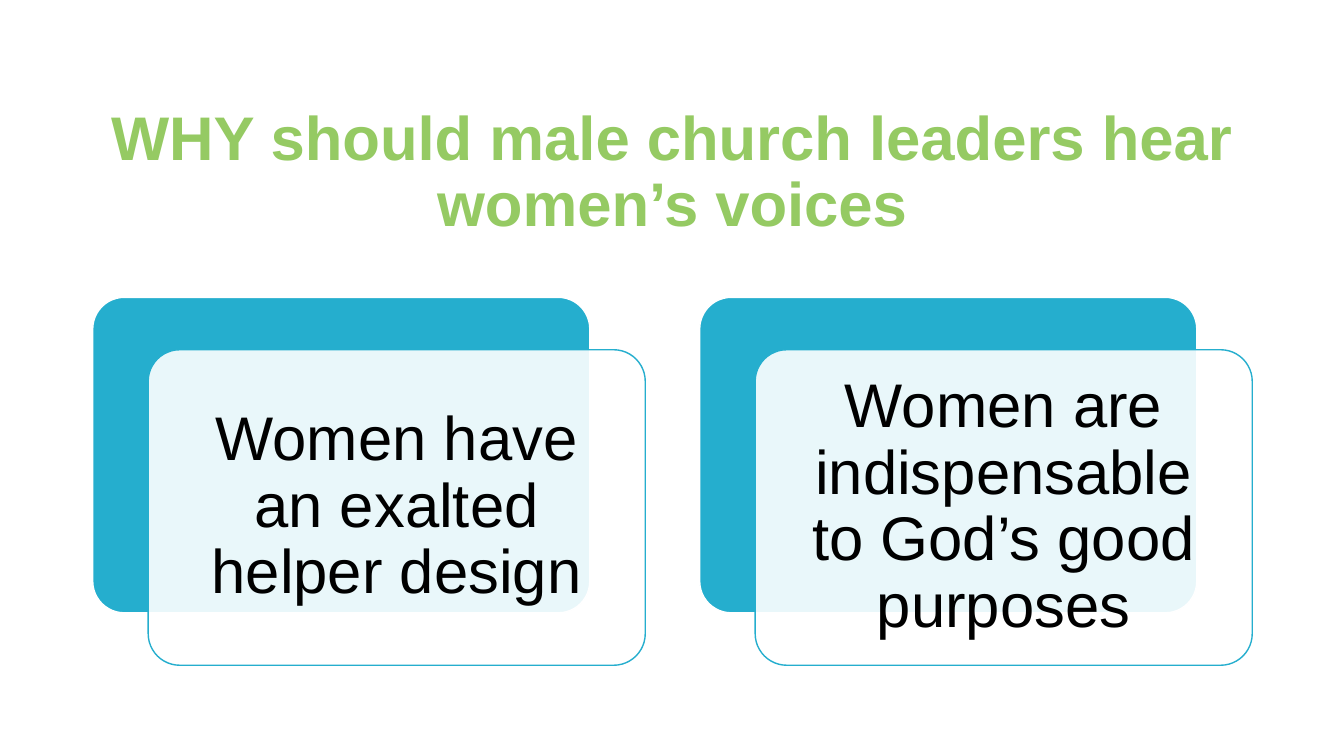
from lxml import etree
from pptx import Presentation
from pptx import util as u
from pptx.dml.color import RGBColor
from pptx.enum import shapes, text
from pptx.oxml.ns import qn


def color(value):
    return RGBColor.from_string(value)


class SlideBuilder:
    """Hold the slide and its style, and add each kind of element."""

    font = "Arial"
    size = 44
    accent = "25AECE"
    white = "FFFFFF"
    card_size = (4.93, 3.13)

    def __init__(self, deck):
        self.slide = deck.slides.add_slide(deck.slide_layouts[5])
        self.slide.background.fill.solid()
        self.slide.background.fill.fore_color.rgb = color(self.white)

    def set_words(self, shape, words, ink, bold=False, inset=0.1):
        frame = shape.text_frame
        frame.text = words
        frame.word_wrap = True
        frame.auto_size = text.MSO_AUTO_SIZE.NONE
        frame.vertical_anchor = text.MSO_ANCHOR.MIDDLE
        frame.margin_left = frame.margin_right = u.Inches(inset)
        frame.margin_top = frame.margin_bottom = u.Inches(inset)
        para = frame.paragraphs[0]
        para.alignment = text.PP_ALIGN.CENTER
        para.line_spacing = 0.9
        span = para.runs[0]
        span.font.name = self.font
        span.font.size = u.Pt(self.size)
        span.font.bold = bold
        span.font.color.rgb = color(ink)

    def title(self, words, left, top, width, height):
        title = self.slide.shapes.title
        title.left, title.top = u.Inches(left), u.Inches(top)
        title.width, title.height = u.Inches(width), u.Inches(height)
        self.set_words(title, words, "95CA63", bold=True)

    def panel(self, left, top, fill, line, opacity=100):
        width, height = self.card_size
        panel = self.slide.shapes.add_shape(
            shapes.MSO_SHAPE.ROUNDED_RECTANGLE,
            u.Inches(left), u.Inches(top), u.Inches(width), u.Inches(height))
        panel.adjustments[0] = 0.1
        panel.shadow.inherit = False
        panel.fill.solid()
        panel.fill.fore_color.rgb = color(fill)
        panel.line.color.rgb = color(line)
        panel.line.width = u.Pt(1)
        if opacity < 100:
            solid = panel.element.spPr.find(qn("a:solidFill"))
            etree.SubElement(solid[0], qn("a:alpha"), val=str(opacity * 1000))
        return panel

    def card(self, words, left, top):
        self.panel(left, top, self.accent, self.white)
        front = self.panel(left + 0.55, top + 0.52, self.white, self.accent, 90)
        self.set_words(front, words, "000000", inset=0.18)


def main():
    deck = Presentation()
    deck.slide_width, deck.slide_height = u.Inches(13.33), u.Inches(7.5)
    builder = SlideBuilder(deck)
    builder.title("WHY should male church leaders hear women’s voices",
                  0.92, 0.45, 11.5, 2.54)
    reasons = ["Women have an exalted helper design",
               "Women are indispensable to God’s good purposes"]
    for index, reason in enumerate(reasons):
        builder.card(reason, 0.92 + index * 6.02, 2.95)
    deck.save("out.pptx")


if __name__ == "__main__":
    main()
